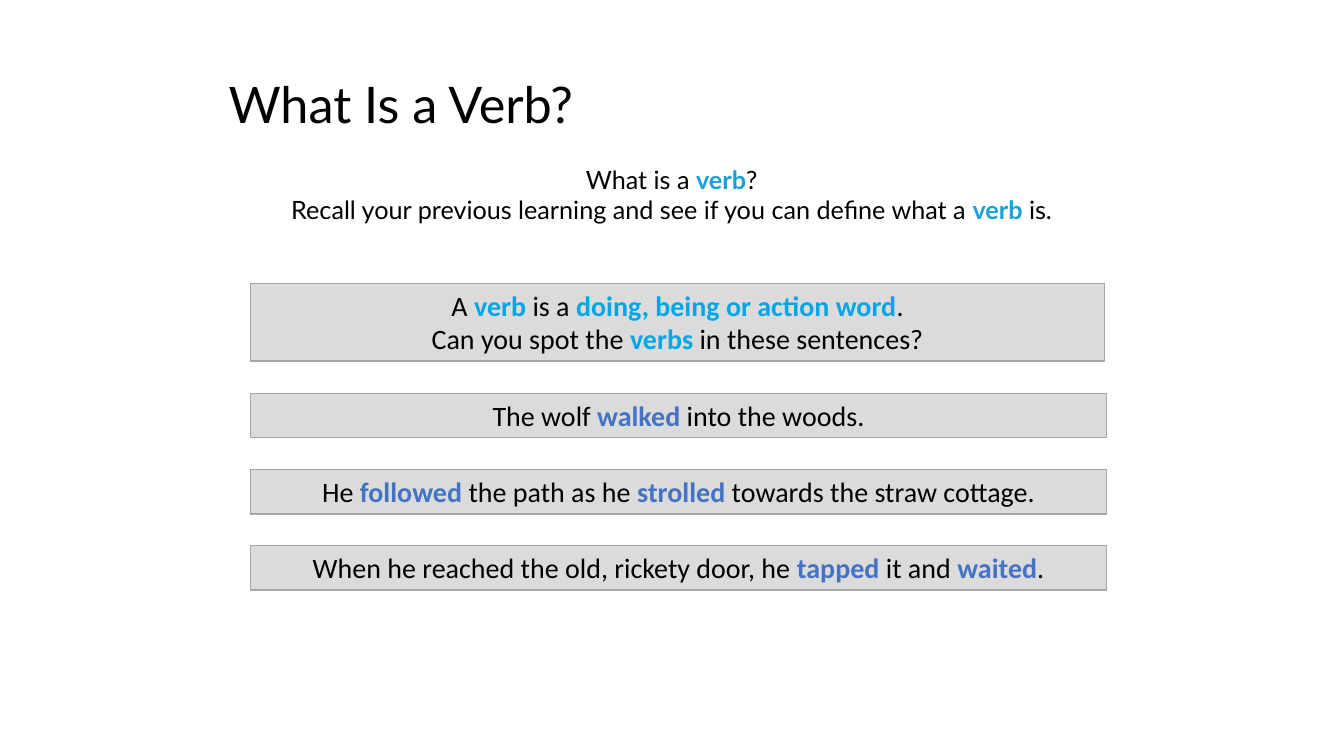
from pptx import Presentation
from pptx import util as u
from pptx.dml.color import RGBColor
from pptx.enum import shapes, text

BLACK, GREY, EDGE = "000000", "DBDBDB", "A5A5A5"
SKY, CYAN, BLUE = "18A0DB", "00A7E6", "4472C4"
BOX_LEFT = 6.32

SENTENCES = [
    "The wolf *walked* into the woods.",
    "He *followed* the path as he *strolled* towards the straw cottage.",
    "When he reached the old, rickety door, he *tapped* it and *waited*.",
]


def colour(value):
    return RGBColor.from_string(value)


def write(para, words, font="Calibri", size=20, accent=BLUE,
          align=text.PP_ALIGN.CENTER, spacing=None):
    """Fill a paragraph; *starred* words are bold in the accent colour."""
    para.alignment = align
    para.line_spacing = spacing
    for number, line in enumerate(words.split("\n")):
        if number:
            para.add_line_break()
        for index, part in enumerate(line.split("*")):
            if not part:
                continue
            strong = index % 2 == 1
            span = para.add_run()
            span.text = part
            span.font.name = font
            span.font.size = u.Pt(size)
            span.font.bold = strong
            span.font.color.rgb = colour(accent if strong else BLACK)


def add_label(page, left, top, width, height, words,
              anchor=text.MSO_ANCHOR.TOP, side=0.25, edge=0.13, **style):
    """Add a plain text box holding one paragraph."""
    box = page.shapes.add_textbox(*map(u.Cm, (left, top, width, height)))
    frame = box.text_frame
    frame.word_wrap = True
    frame.vertical_anchor = anchor
    frame.margin_left = frame.margin_right = u.Cm(side)
    frame.margin_top = frame.margin_bottom = u.Cm(edge)
    write(frame.paragraphs[0], words, **style)


def add_panel(page, top, width, height, lines, **style):
    """Add a grey bordered box with one paragraph per line."""
    box = page.shapes.add_shape(shapes.MSO_SHAPE.RECTANGLE,
                                *map(u.Cm, (BOX_LEFT, top, width, height)))
    box.shadow.inherit = False
    box.fill.solid()
    box.fill.fore_color.rgb = colour(GREY)
    box.line.color.rgb = colour(EDGE)
    box.line.width = u.Pt(1)
    frame = box.text_frame
    frame.word_wrap = True
    frame.auto_size = text.MSO_AUTO_SIZE.SHAPE_TO_FIT_TEXT
    frame.vertical_anchor = text.MSO_ANCHOR.TOP
    for index, words in enumerate(lines):
        para = frame.add_paragraph() if index else frame.paragraphs[0]
        write(para, words, **style)


def main():
    deck = Presentation()
    deck.slide_width, deck.slide_height = u.Cm(33.87), u.Cm(19.05)
    page = deck.slides.add_slide(deck.slide_layouts[6])

    # Title and opening question
    add_label(page, 5.51, 1.32, 22.83, 2.77, "What Is a Verb?",
              anchor=text.MSO_ANCHOR.MIDDLE, font="Lato", size=36,
              align=text.PP_ALIGN.LEFT, spacing=0.9)
    add_label(page, BOX_LEFT, 3.94, 21.21, 1.96,
              "What is a *verb*?\nRecall your previous learning and see "
              "if you can define what a *verb* is.",
              side=0, edge=0.2, font="Lato", size=18, accent=SKY)

    # Definition
    add_panel(page, 7.14, 21.51, 1.96,
              ["A *verb* is a *doing, being or action word*.",
               "Can you spot the *verbs* in these sentences?"], accent=CYAN)

    # Example sentences at an even pitch
    for row, sentence in enumerate(SENTENCES):
        add_panel(page, 9.91 + 1.92 * row, 21.56, 1.12, [sentence])

    deck.save("out.pptx")


if __name__ == "__main__":
    main()
